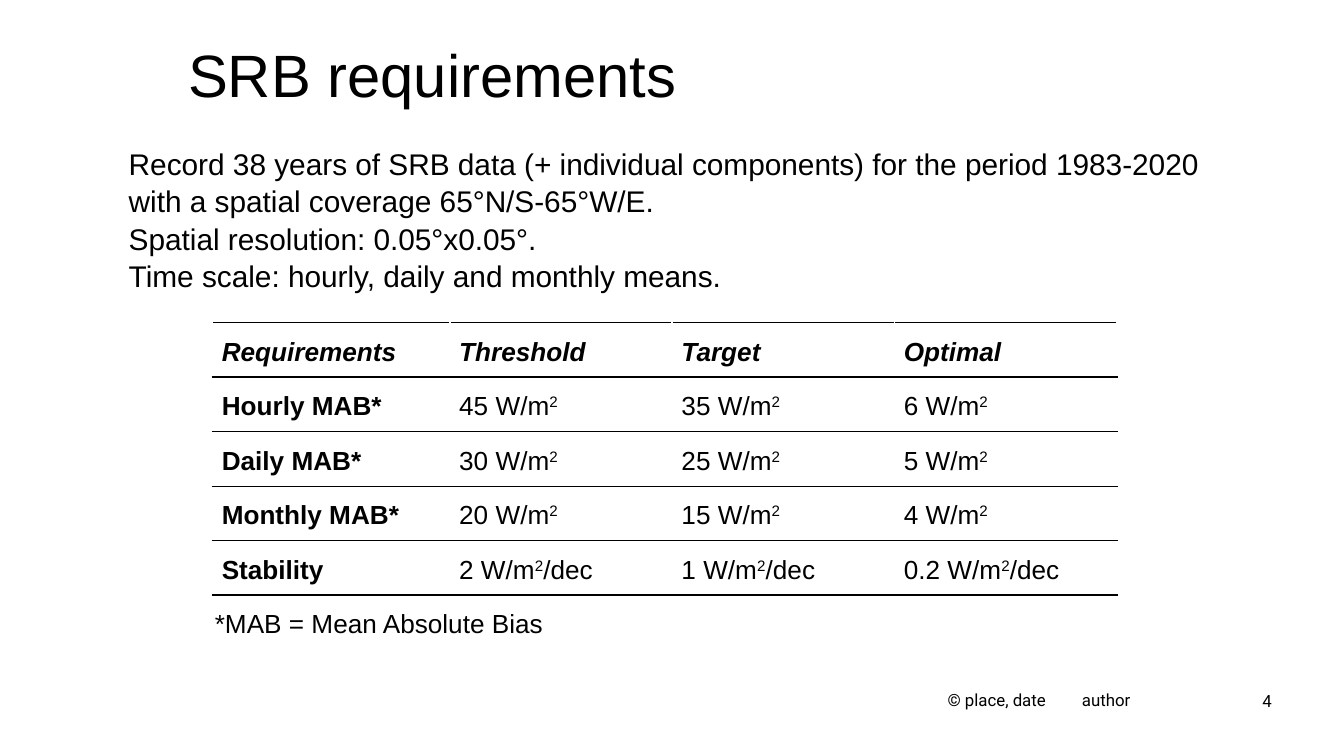
from lxml import etree
from pptx import Presentation
from pptx.dml.color import RGBColor
from pptx.enum.shapes import MSO_SHAPE
from pptx.enum.text import MSO_ANCHOR, PP_ALIGN
from pptx.oxml.ns import qn
from pptx.util import Pt

RECTANGLE = MSO_SHAPE.RECTANGLE
TOP, MIDDLE = MSO_ANCHOR.TOP, MSO_ANCHOR.MIDDLE
LEFT, RIGHT = PP_ALIGN.LEFT, PP_ALIGN.RIGHT
TITLE_ONLY = 5
BLACK, WHITE = "000000", "FFFFFF"

SCOPE = [
    "Record 38 years of SRB data (+ individual components) for the period "
    "1983-2020 with a spatial coverage 65°N/S-65°W/E.",
    "Spatial resolution: 0.05°x0.05°.",
    "Time scale: hourly, daily and monthly means.",
]
HEADINGS = ["Requirements", "Threshold", "Target", "Optimal"]
# Row label, values, text that follows the unit W/m2
REQUIREMENTS = [
    ("Hourly MAB*", ["45", "35", "6"], ""),
    ("Daily MAB*", ["30", "25", "5"], ""),
    ("Monthly MAB*", ["20", "15", "4"], ""),
    ("Stability", ["2", "1", "0.2"], "/dec"),
]
COLUMN_WIDTHS = [127.2, 119.1, 119.1, 119.1]
ROW_HEIGHT = 29.2
RULE_WIDTHS = [1, 1, 0.5, 0.5, 0.5, 1]


def color(hex_code):
    return RGBColor.from_string(hex_code)


def format_paragraph(paragraph, size, font="Arial", bold=False, italic=False,
                     align=LEFT, spacing=1.0):
    paragraph.alignment = align
    paragraph.line_spacing = spacing
    paragraph.font.name = font
    paragraph.font.size = Pt(size)
    paragraph.font.bold = bold
    paragraph.font.italic = italic
    paragraph.font.color.rgb = color(BLACK)


def place(shape, left, top, width, height):
    shape.left, shape.top = Pt(left), Pt(top)
    shape.width, shape.height = Pt(width), Pt(height)


def fill_frame(frame, lines, size, anchor=TOP, wrap=True, **style):
    frame.word_wrap = wrap
    frame.vertical_anchor = anchor
    frame.text = "\n".join(lines)
    for paragraph in frame.paragraphs:
        format_paragraph(paragraph, size, **style)


def add_text(slide, box, lines, size, **style):
    frame = slide.shapes.add_textbox(*map(Pt, box)).text_frame
    fill_frame(frame, lines, size, **style)
    return frame


def add_title(slide, text):
    title = slide.shapes.title
    place(title, 93.6, 14.4, 591.8, 55.4)
    fill_frame(title.text_frame, [text], 32, anchor=MIDDLE, spacing=0.9)


def add_footnote(slide, text):
    note = slide.shapes.add_shape(RECTANGLE, *map(Pt, (108, 321.1, 191.5, 24.5)))
    note.shadow.inherit = False
    note.fill.solid()
    note.fill.fore_color.rgb = color(WHITE)
    note.line.fill.background()
    fill_frame(note.text_frame, [text], 14, wrap=False, spacing=1.05)


def set_border(cell, side, width, hex_code):
    line = etree.SubElement(cell._tc.get_or_add_tcPr(), qn(f"a:ln{side}"),
                            w=str(Pt(width)))
    solid = etree.SubElement(line, qn("a:solidFill"))
    etree.SubElement(solid, qn("a:srgbClr"), val=hex_code)


def write_cell(cell, parts, above, below, bold=False, italic=False):
    """Write the parts as runs; every second part is raised."""
    cell.margin_left = cell.margin_right = Pt(5)
    cell.margin_top = cell.margin_bottom = 0
    cell.vertical_anchor = MIDDLE
    paragraph = cell.text_frame.paragraphs[0]
    for index, part in enumerate(parts):
        if part:
            run = paragraph.add_run()
            run.text = part
            if index % 2:
                run._r.get_or_add_rPr().set("baseline", "30000")
    format_paragraph(paragraph, 14, bold=bold, italic=italic, spacing=1.15)
    for side, width, hex_code in (("L", 1, WHITE), ("R", 1, WHITE),
                                  ("T", above, BLACK), ("B", below, BLACK)):
        set_border(cell, side, width, hex_code)
    cell.fill.background()


def add_requirements(slide):
    rows = [[[heading] for heading in HEADINGS]]
    for label, values, suffix in REQUIREMENTS:
        rows.append([[label]] + [[f"{value} W/m", "2", suffix] for value in values])
    table = slide.shapes.add_table(
        len(rows), len(HEADINGS), Pt(113.8), Pt(172.8),
        Pt(sum(COLUMN_WIDTHS)), Pt(ROW_HEIGHT * len(rows))).table
    table.first_row = table.horz_banding = False
    for column, width in zip(table.columns, COLUMN_WIDTHS):
        column.width = Pt(width)
    for r, row in enumerate(rows):
        table.rows[r].height = Pt(ROW_HEIGHT)
        for c, parts in enumerate(row):
            write_cell(table.cell(r, c), parts, RULE_WIDTHS[r], RULE_WIDTHS[r + 1],
                       bold=r == 0 or c == 0, italic=r == 0)


def main():
    deck = Presentation()
    deck.slide_width, deck.slide_height = Pt(720), Pt(405)
    slide = deck.slides.add_slide(deck.slide_layouts[TITLE_ONLY])

    # Footer and slide number
    footer = add_text(slide, (403.2, 365.8, 205.2, 21.6),
                      ["© place, date\tauthor"], 9, font="Roboto", align=RIGHT)
    footer.margin_left, footer.margin_right = 0, Pt(2.9)
    add_text(slide, (603.4, 366.5, 85, 18), ["4"], 9, font="Roboto", align=RIGHT)

    # Title, table with its footnote, and scope of the record
    add_title(slide, "SRB requirements")
    add_requirements(slide)
    add_footnote(slide, "*MAB = Mean Absolute Bias")
    add_text(slide, (61.9, 73.4, 601.9, 85), SCOPE, 16, spacing=1.05)

    deck.save("out.pptx")


if __name__ == "__main__":
    main()
